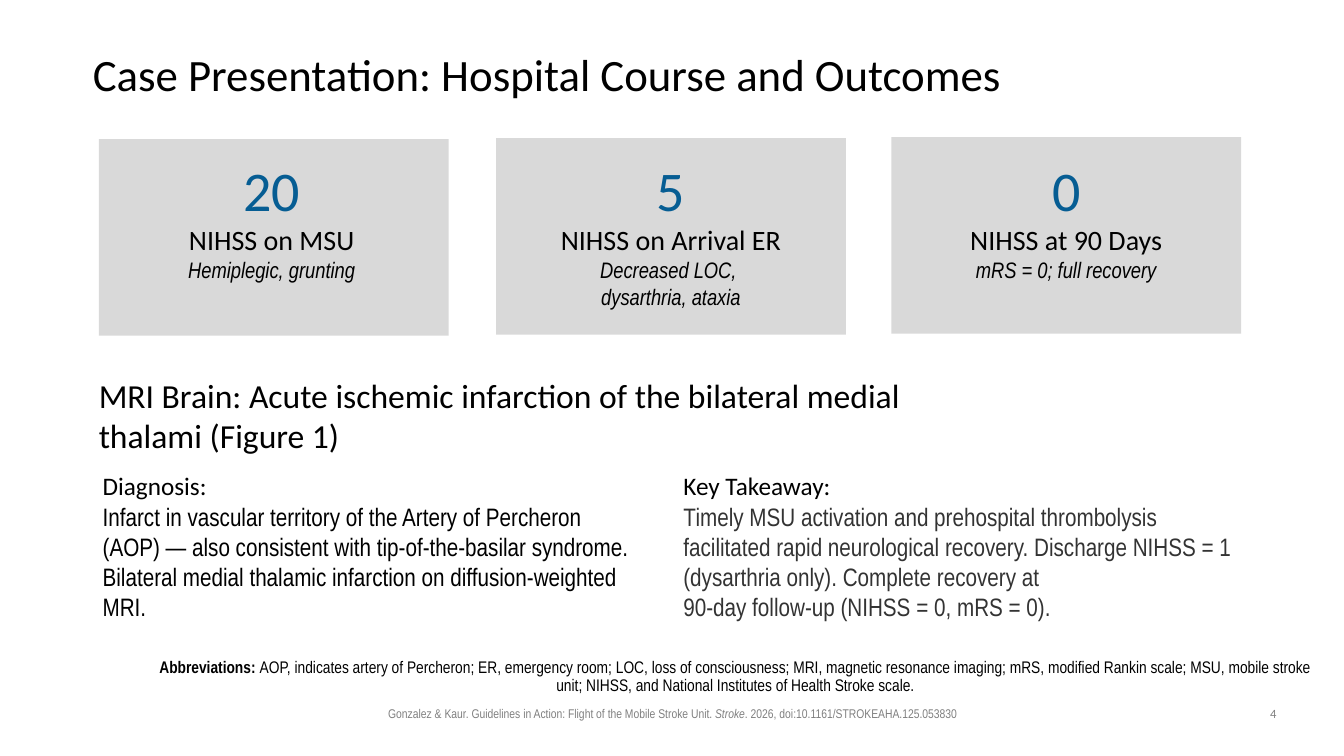
from pptx import Presentation
from pptx.dml.color import RGBColor
from pptx.enum.shapes import MSO_SHAPE
from pptx.enum.text import MSO_ANCHOR, PP_ALIGN
from pptx.util import Inches, Pt

BLACK = RGBColor(0x00, 0x00, 0x00)
BLUE = RGBColor(0x06, 0x5D, 0x93)
CARD_GRAY = RGBColor(0xD9, 0xD9, 0xD9)
DARK_GRAY = RGBColor(0x33, 0x33, 0x33)
FOOTER_GRAY = RGBColor(0x80, 0x80, 0x80)
HEADING_FONT = "Calibri"
BODY_FONT = "Arial Narrow"
DEFAULT_INSETS = (0.1, 0.05, 0.1, 0.05)
FLUSH_LEFT = (0, 0.05, 0.1, 0.05)

# Card left and top, caption left and width, score, label, detail
SCORES = [
    (0.98, 1.38, 1.05, 3.29, "20", "NIHSS on MSU", "Hemiplegic, grunting"),
    (4.92, 1.37, 5.01, 3.29, "5", "NIHSS on Arrival ER",
     "Decreased LOC, \ndysarthria, ataxia"),
    (8.84, 1.36, 8.87, 3.41, "0", "NIHSS at 90 Days", "mRS = 0; full recovery"),
]

# Left, width, heading, text, text colour
FINDINGS = [
    (0.92, 5.44, "Diagnosis:",
     "Infarct in vascular territory of the Artery of Percheron (AOP) — also "
     "consistent with tip-of-the-basilar syndrome. Bilateral medial thalamic "
     "infarction on diffusion-weighted MRI.", BLACK),
    (6.68, 5.74, "Key Takeaway:",
     "Timely MSU activation and prehospital thrombolysis facilitated rapid "
     "neurological recovery. Discharge NIHSS = 1 (dysarthria only). Complete "
     "recovery at \n90-day follow-up (NIHSS = 0, mRS = 0).", DARK_GRAY),
]


def add_text_frame(slide, left, top, width, height,
                   insets=DEFAULT_INSETS, anchor=MSO_ANCHOR.TOP):
    box = slide.shapes.add_textbox(
        Inches(left), Inches(top), Inches(width), Inches(height))
    frame = box.text_frame
    frame.word_wrap = True
    frame.vertical_anchor = anchor
    (frame.margin_left, frame.margin_top,
     frame.margin_right, frame.margin_bottom) = map(Inches, insets)
    return frame


def style_paragraph(paragraph, size, name, color, align=PP_ALIGN.LEFT, spacing=1.0):
    paragraph.alignment = align
    paragraph.line_spacing = spacing
    paragraph.font.size = Pt(size)
    paragraph.font.name = name
    paragraph.font.color.rgb = color


def add_run(paragraph, text, bold=False, italic=False):
    run = paragraph.add_run()
    run.text = text
    run.font.bold = bold
    run.font.italic = italic


def add_score_card(slide, left, top, text_left, text_width, score, label, detail):
    card = slide.shapes.add_shape(
        MSO_SHAPE.RECTANGLE, Inches(left), Inches(top), Inches(3.47), Inches(1.95))
    card.shadow.inherit = False
    card.fill.solid()
    card.fill.fore_color.rgb = CARD_GRAY
    card.line.fill.background()

    frame = add_text_frame(slide, text_left, 1.49, text_width, 1.65)
    lines = [(score, 40, HEADING_FONT, BLUE), (label, 20, HEADING_FONT, BLACK),
             (detail, 16, BODY_FONT, BLACK)]
    for index, (text, size, name, color) in enumerate(lines):
        paragraph = frame.add_paragraph() if index else frame.paragraphs[0]
        paragraph.text = text
        style_paragraph(paragraph, size, name, color, PP_ALIGN.CENTER)
    paragraph.font.italic = True


def add_finding(slide, left, width, heading, text, color):
    frame = add_text_frame(slide, left, 4.65, width, 1.59)
    title = frame.paragraphs[0]
    title.text = heading
    style_paragraph(title, 18, HEADING_FONT, BLACK, spacing=0.9)
    body = frame.add_paragraph()
    body.text = text
    style_paragraph(body, 18, BODY_FONT, color)


def add_footer(slide):
    citation = add_text_frame(slide, 2.36, 6.95, 8.62, 0.25).paragraphs[0]
    style_paragraph(citation, 9, BODY_FONT, FOOTER_GRAY, PP_ALIGN.CENTER)
    add_run(citation, "Gonzalez & Kaur. Guidelines in Action: "
                      "Flight of the Mobile Stroke Unit. ")
    add_run(citation, "Stroke", italic=True)
    add_run(citation, ". 2026, doi:10.1161/STROKEAHA.125.053830")

    number = add_text_frame(slide, 12.42, 6.95, 0.42, 0.26).paragraphs[0]
    number.text = "4"
    style_paragraph(number, 9, HEADING_FONT, FOOTER_GRAY, PP_ALIGN.CENTER)


def main():
    presentation = Presentation()
    presentation.slide_width = Inches(13.33)
    presentation.slide_height = Inches(7.5)
    slide = presentation.slides.add_slide(presentation.slide_layouts[6])

    # Title
    title = add_text_frame(slide, 0.92, 0.4, 12.19, 0.72,
                           (0, 0, 0, 0), MSO_ANCHOR.MIDDLE).paragraphs[0]
    title.text = "Case Presentation: Hospital Course and Outcomes"
    style_paragraph(title, 32, HEADING_FONT, BLACK, spacing=0.9)

    # Stroke scores
    for score in SCORES:
        add_score_card(slide, *score)

    # Imaging result
    imaging = add_text_frame(slide, 0.98, 3.67, 8.26, 0.91, FLUSH_LEFT).paragraphs[0]
    imaging.text = ("MRI Brain: Acute ischemic infarction of the bilateral "
                    "medial thalami (Figure 1)")
    style_paragraph(imaging, 24, HEADING_FONT, BLACK)

    # Diagnosis and takeaway
    for finding in FINDINGS:
        add_finding(slide, *finding)

    # Abbreviations
    abbreviations = add_text_frame(slide, 1.58, 6.58, 11.53, 0.37,
                                   FLUSH_LEFT, MSO_ANCHOR.BOTTOM).paragraphs[0]
    style_paragraph(abbreviations, 12, BODY_FONT, BLACK, PP_ALIGN.CENTER, 0.9)
    add_run(abbreviations, "Abbreviations: ", bold=True)
    add_run(abbreviations,
            "AOP, indicates artery of Percheron; ER, emergency room; LOC, loss of "
            "consciousness; MRI, magnetic resonance imaging; mRS, modified Rankin "
            "scale; MSU, mobile stroke unit; NIHSS, and National Institutes of "
            "Health Stroke scale.")

    # Citation and slide number
    add_footer(slide)

    presentation.save("out.pptx")


if __name__ == "__main__":
    main()
